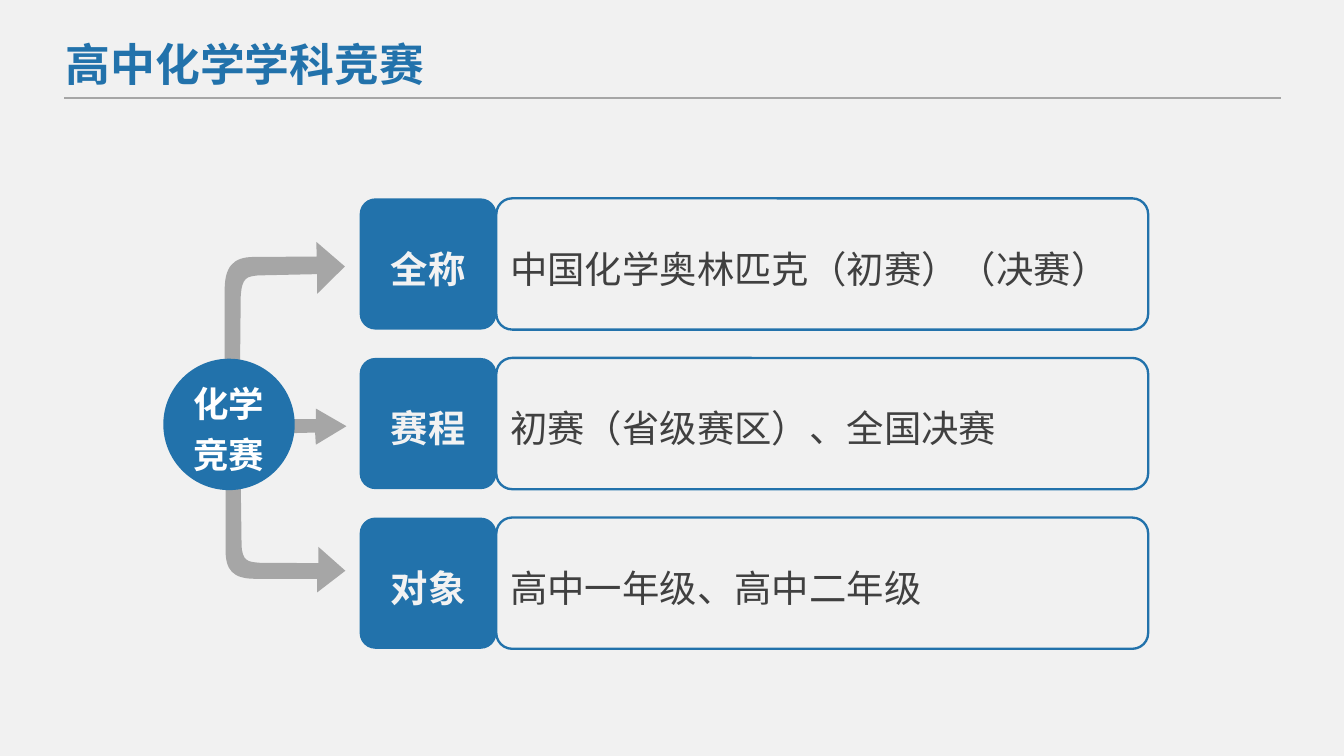
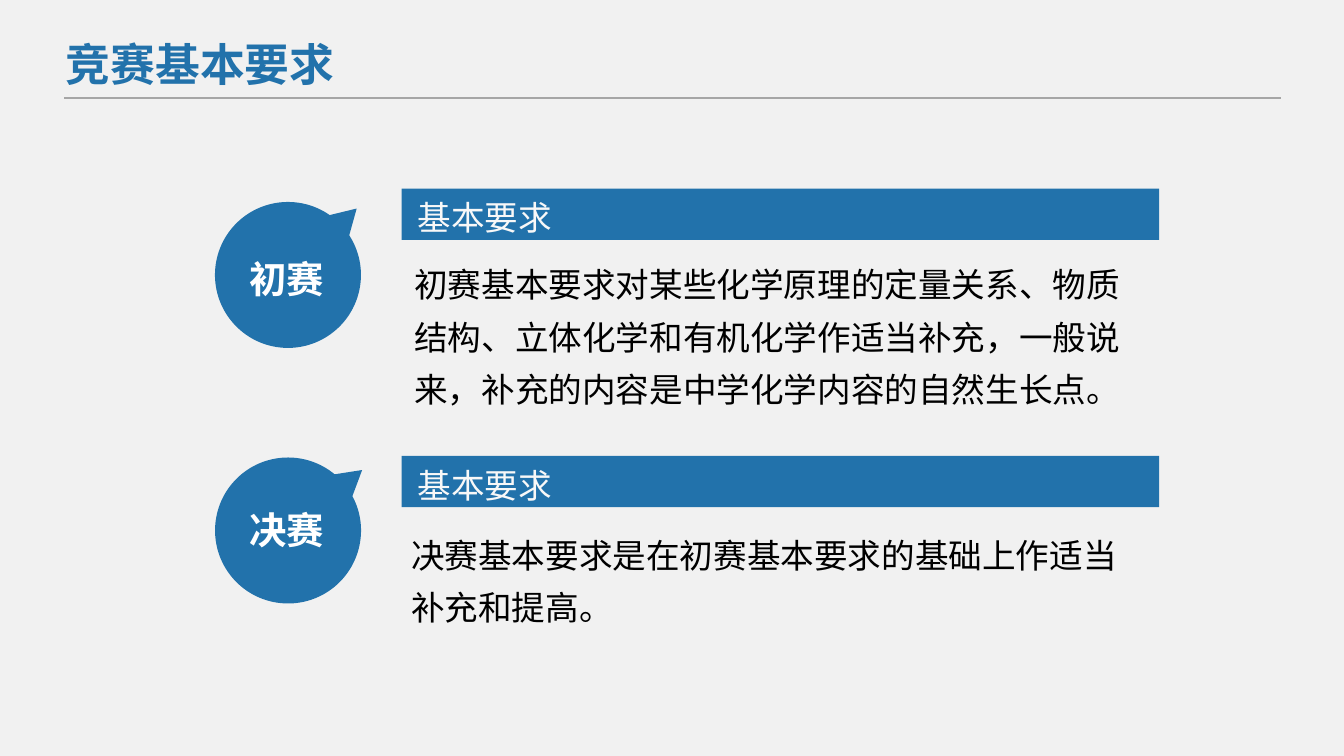
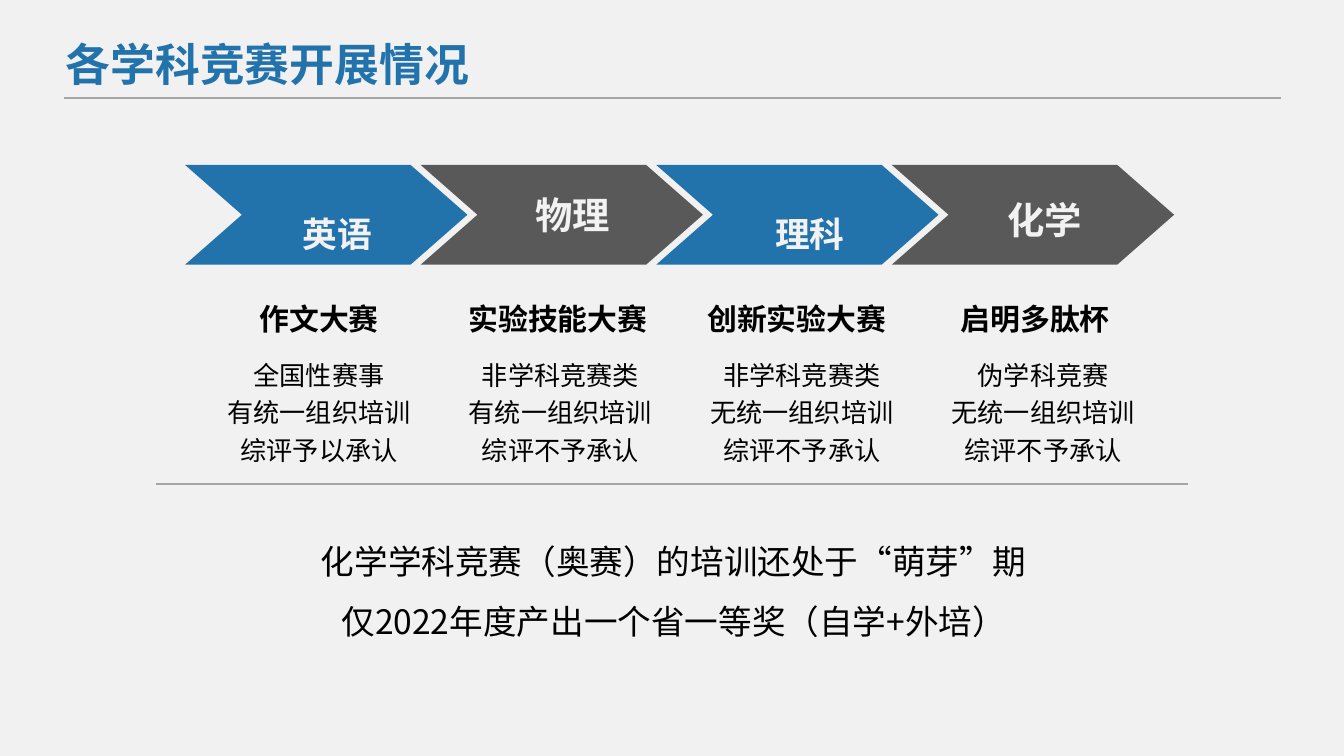
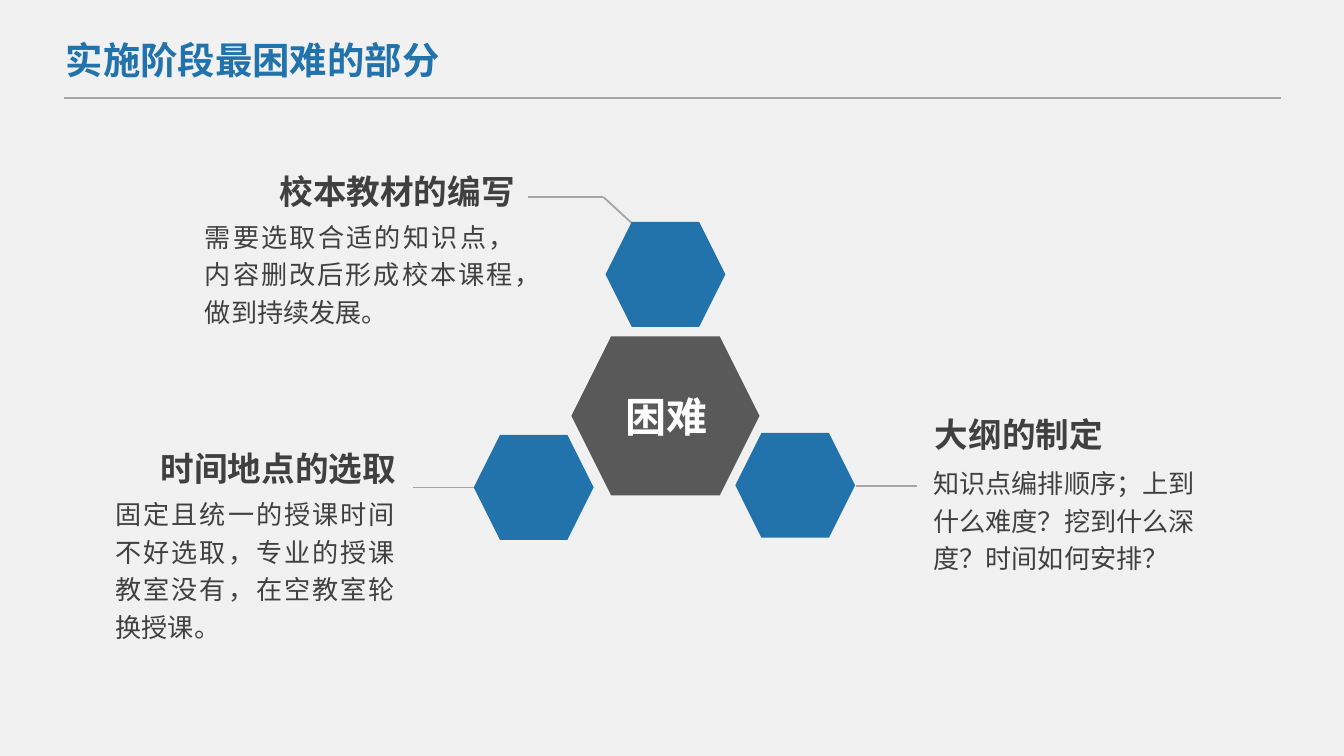
from math import cos, radians, sin, tan

from lxml import etree
from pptx import Presentation
from pptx.dml.color import RGBColor
from pptx.enum import lang, shapes, text
from pptx.oxml.ns import qn
from pptx.util import Pt

FONT = "Noto Sans CJK SC"
BLUE, GREY, DARK, RULE = "2272AB", "595959", "404040", "A6A6A6"
BACKGROUND, PALE, WHITE, BLACK = "F1F1F1", "F2F2F2", "FFFFFF", "000000"
TIGHT, ROOMY = (5, 2.5), (7.2, 3.6)
ALIGN = {"left": text.PP_ALIGN.LEFT, "center": text.PP_ALIGN.CENTER,
         "right": text.PP_ALIGN.RIGHT, "justify": text.PP_ALIGN.JUSTIFY}
PRESET = shapes.MSO_SHAPE

# Slide 1
FACTS = [("全称", "中国化学奥林匹克（初赛）（决赛）"),
         ("赛程", "初赛（省级赛区）、全国决赛"),
         ("对象", "高中一年级、高中二年级")]
# Outlines: a pair is a corner, six numbers are a Bézier curve.
ARROW_DOWN = [(128.7, 238.3), (129.4, 291.6), (129.6, 301, 133.2, 301, 139, 301.5),
              (170.6, 301.7), (170.6, 293), (185, 305.8), (169.9, 317.4), (169.9, 310.1),
              (136.8, 310.1), (124.6, 310.1, 120.8, 305.3, 120.8, 294.5), (120.8, 236.9),
              (121.7, 227.5, 126.7, 228.2, 128.7, 238.3)]
ARROW_RIGHT = [(108.7, 233.3), (168.8, 231.8), (169.2, 238.3), (185.6, 228.4),
               (169.2, 218.9), (169.2, 224.6), (108.7, 224.6)]
ARROW_UP = [(128.4, 221), (129, 159.1), (129.6, 148.3, 132.5, 148.3, 138.2, 147.6),
            (169.9, 146.9), (169.9, 157.5), (184.8, 142.8), (169.5, 129.6), (169.7, 137.5),
            (136.1, 137.7), (124.6, 137.7, 120.4, 143.3, 120.4, 155.5), (120.4, 222.5),
            (121.7, 233.3, 126.7, 232.6, 128.4, 221)]

# Slide 2: stage, bubble centre, tail angle, label top, band top, body position, body
STAGES = [
    ("初赛", 147.3, -44, 134.6, 101.1, (217, 132.5, 404.6, 90),
     "初赛基本要求对某些化学原理的定量关系、物质结构、立体化学和有机化学作适当补充，"
     "一般说来，补充的内容是中学化学内容的自然生长点。"),
    ("决赛", 284.2, -39.2, 269.3, 244.3, (215.3, 277.4, 404.6, 62),
     "决赛基本要求是在初赛基本要求的基础上作适当补充和提高。"),
]

# Slide 3: subject, label position, label style, contest, details
LOWERED = dict(size=32, spacing=1.2, baseline=-3000)
SUBJECTS = [
    ("英语", (114.9, 96.5, 131.8, 37.4), LOWERED, "作文大赛",
     "全国性赛事\n有统一组织培训\n综评予以承认"),
    ("物理", (243.1, 99.1, 127.4, 31.7), dict(size=20), "实验技能大赛",
     "非学科竞赛类\n有统一组织培训\n综评不予承认"),
    ("理科", (370.8, 96.5, 126, 37.4), LOWERED, "创新实验大赛",
     "非学科竞赛类\n无统一组织培训\n综评不予承认"),
    ("化学", (496.1, 97.2, 127.4, 36), dict(size=20, spacing=1.2), "启明多肽杯",
     "伪学科竞赛\n无统一组织培训\n综评不予承认"),
]
SUMMARY = "化学学科竞赛（奥赛）的培训还处于“萌芽”期\n仅2022年度产出一个省一等奖（自学+外培）"

# Slide 4: heading, position, details, position, alignment
DIFFICULTIES = [
    ("校本教材的编写", (144.7, 89.3, 136.1, 26.6),
     "需要选取合适的知识点，内容删改后形成校本课程，做到持续发展。",
     (104.8, 112.5, 176, 65.5), "justify"),
    ("时间地点的选取", (81, 237.6, 136.1, 26.6),
     "固定且统一的授课时间不好选取，专业的授课教室没有，在空教室轮换授课。",
     (56.9, 261.2, 159.8, 86.4), "justify"),
    ("大纲的制定", (495.8, 219.3, 100.1, 26.6),
     "知识点编排顺序；上到什么难度？挖到什么深度？时间如何安排？",
     (495, 244.6, 158.4, 65.5), "left"),
]
HEXAGONS = [(324.4, 118.9), (393.9, 231.9), (253.8, 233)]
LEADERS = [(491, 260.2, 458.6, 260.2), (254.2, 261.2, 221, 261.2),
           (338.4, 119.5, 323.3, 105.6), (323.3, 105.6, 282.8, 105.6)]


def colour(value):
    return RGBColor.from_string(value)


def points(values):
    return [Pt(value) for value in values]


def set_text(frame, words, size, ink, bold=False, align="left", spacing=None,
             inset=ROOMY, wrap=True, middle=False, baseline=None):
    frame.text = words
    frame.word_wrap = wrap
    frame.vertical_anchor = text.MSO_ANCHOR.MIDDLE if middle else text.MSO_ANCHOR.TOP
    frame.margin_left = frame.margin_right = Pt(inset[0])
    frame.margin_top = frame.margin_bottom = Pt(inset[1])
    for para in frame.paragraphs:
        para.alignment = ALIGN[align]
        if spacing:
            para.line_spacing = spacing
        for span in para.runs:
            font = span.font
            font.size, font.bold, font.name = Pt(size), bold, FONT
            font.color.rgb = colour(ink)
            font.language_id = lang.MSO_LANGUAGE_ID.SIMPLIFIED_CHINESE
            properties = span._r.get_or_add_rPr()
            latin = properties.find(qn("a:latin"))
            latin.addnext(etree.Element(qn("a:ea"), typeface=FONT))
            if baseline:
                properties.set("baseline", str(baseline))


def add_text(page, at, words, size, ink, grow=True, **style):
    frame = page.shapes.add_textbox(*points(at)).text_frame
    set_text(frame, words, size, ink, **style)
    frame.auto_size = (text.MSO_AUTO_SIZE.SHAPE_TO_FIT_TEXT if grow
                       else text.MSO_AUTO_SIZE.NONE)


def paint(shape, fill):
    shape.shadow.inherit = False
    shape.fill.solid()
    shape.fill.fore_color.rgb = colour(fill)
    shape.line.fill.background()


def add_block(page, preset, at, fill):
    shape = page.shapes.add_shape(preset, *points(at))
    paint(shape, fill)
    return shape


def add_line(page, ends, width=1):
    line = page.shapes.add_connector(shapes.MSO_CONNECTOR.STRAIGHT, *points(ends))
    line.line.color.rgb = colour(RULE)
    line.line.width = Pt(width)
    etree.SubElement(line._element.spPr, qn("a:effectLst"))


def add_outline(page, outline, fill):
    """Draw a closed outline, joining the three points of each curve in one segment."""
    corners = [points(part[i:i + 2]) for part in outline for i in range(0, len(part), 2)]
    builder = page.shapes.build_freeform(*corners[0])
    builder.add_line_segments(corners[1:], close=True)
    shape = builder.convert_to_shape()
    segments = iter(list(shape._element.iter(qn("a:lnTo"))))
    for part in outline[1:]:
        segment = next(segments)
        if len(part) == 6:
            segment.addprevious(curve := etree.Element(qn("a:cubicBezTo")))
            for piece in (segment, next(segments), next(segments)):
                curve.append(piece[0])
                piece.getparent().remove(piece)
    paint(shape, fill)


def bubble(x, y, radius, tail, curves=4):
    """Outline of a circle with a tail pointing at the angle given."""
    def at(angle, reach=radius):
        return x + reach * cos(radians(angle)), y + reach * sin(radians(angle))

    gap = 11.1
    step = (360 - 2 * gap) / curves
    pull = 4 / 3 * tan(radians(step / 4)) * radius
    outline = [at(tail, radius * 1.31), at(tail + gap)]
    for index in range(curves):
        start = tail + gap + step * index
        end = start + step
        (x1, y1), (x2, y2) = at(start), at(end)
        outline.append((x1 - pull * sin(radians(start)), y1 + pull * cos(radians(start)),
                        x2 + pull * sin(radians(end)), y2 - pull * cos(radians(end)),
                        x2, y2))
    return outline


def add_page(deck, title, size=24):
    page = deck.slides.add_slide(deck.slide_layouts[6])
    add_line(page, (34.3, 52.6, 686.2, 52.6))
    add_text(page, (28.1, 16.2, len(title) * size + 15, size * 1.5), title, size,
             BLUE, bold=True, wrap=False)
    return page


def build_overview(deck):
    page = add_page(deck, "高中化学学科竞赛")
    for arrow in (ARROW_DOWN, ARROW_RIGHT, ARROW_UP):
        add_outline(page, arrow, RULE)
    style = dict(spacing=1.2, inset=TIGHT, middle=True)
    height = 70.3
    for row, (label, fact) in enumerate(FACTS):
        top = 106.3 + 85.5 * row
        frame = add_block(page, PRESET.ROUNDED_RECTANGLE, (265.9, top, 349.2, height), BLUE)
        frame.fill.background()
        frame.line.color.rgb = colour(BLUE)
        frame.line.width = Pt(1.25)
        tag = add_block(page, PRESET.ROUNDED_RECTANGLE, (192.7, top, 73.3, height), BLUE)
        frame.adjustments[0] = tag.adjustments[0] = 0.12
        set_text(frame.text_frame, fact, 20, DARK, **style)
        set_text(tag.text_frame, label, 20, PALE, bold=True, align="center", **style)
    hub = add_block(page, PRESET.OVAL, (87.5, 192.2, 70.4, 70.4), BLUE)
    set_text(hub.text_frame, "化学\n竞赛", 19, WHITE, bold=True, align="center", **style)


def build_requirements(deck):
    page = add_page(deck, "竞赛基本要求")
    for stage, centre, tail, label_top, band_top, body_at, body in STAGES:
        add_block(page, PRESET.RECTANGLE, (215.2, band_top, 405.8, 27.4), BLUE)
        add_text(page, (216.7, band_top + 1, 327, 28.8), "基本要求", 18, "F8F8F8")
        add_text(page, body_at, body, 18, BLACK, spacing=1.3, inset=TIGHT)
        add_outline(page, bubble(154.3, centre, 39.1, tail), BLUE)
        add_text(page, (128.5, label_top, 50.4, 28.8), stage, 20, WHITE, grow=False,
                 bold=True, align="center", inset=TIGHT, wrap=False, middle=True)


def build_subjects(deck):
    page = add_page(deck, "各学科竞赛开展情况")
    top, width, height, point = 88.4, 151.2, 53.4, 30.4
    for column, (subject, label_at, style, contest, details) in enumerate(SUBJECTS):
        left = 99.2 + 126.2 * column
        right, middle, bottom = left + width, top + height / 2, top + height
        add_outline(page, [(left, top), (right - point, top), (right, middle),
                           (right - point, bottom), (left, bottom), (left + point, middle)],
                    GREY if column % 2 else BLUE)
        add_text(page, label_at, subject, ink=PALE, bold=True, align="center",
                 middle=True, **style)
        head_width = 16 * len(contest) + 11
        add_text(page, (171 + 127.9 * column - head_width / 2, 158.4, head_width, 24.5),
                 contest, 16, BLACK, bold=True, align="center", inset=TIGHT, wrap=False)
        add_text(page, (115.2 + 129.3 * column, 186.6, 111.6, 66.2), details, 14, BLACK,
                 align="center", spacing=1.2, inset=TIGHT)
    add_line(page, (83.5, 259.2, 636.5, 259.2), 0.75)
    add_text(page, (83.7, 276.5, 554.4, 70.6), SUMMARY, 18, BLACK, align="center",
             spacing=1.5, inset=TIGHT)


def build_difficulties(deck):
    page = add_page(deck, "实施阶段最困难的部分", 20)
    for ends in LEADERS:
        add_line(page, ends)
    for left, top in HEXAGONS:
        add_block(page, PRESET.HEXAGON, (left, top, 64.2, 56.2), BLUE)
    for heading, heading_at, details, details_at, align in DIFFICULTIES:
        add_text(page, heading_at, heading, 18, DARK, bold=True, align="right",
                 inset=TIGHT, wrap=False)
        add_text(page, details_at, details, 14, DARK, align=align, spacing=1.2,
                 inset=TIGHT)
    add_block(page, PRESET.HEXAGON, (306.1, 180.2, 100.8, 85.2), GREY)
    add_text(page, (326.2, 206.2, 61.9, 33.8), "困难", 22, WHITE, bold=True,
             align="center")


def main():
    deck = Presentation()
    deck.slide_width, deck.slide_height = Pt(720), Pt(405)
    backdrop = deck.slide_master.background.fill
    backdrop.solid()
    backdrop.fore_color.rgb = colour(BACKGROUND)
    build_overview(deck)
    build_requirements(deck)
    build_subjects(deck)
    build_difficulties(deck)
    deck.save("out.pptx")


if __name__ == "__main__":
    main()
